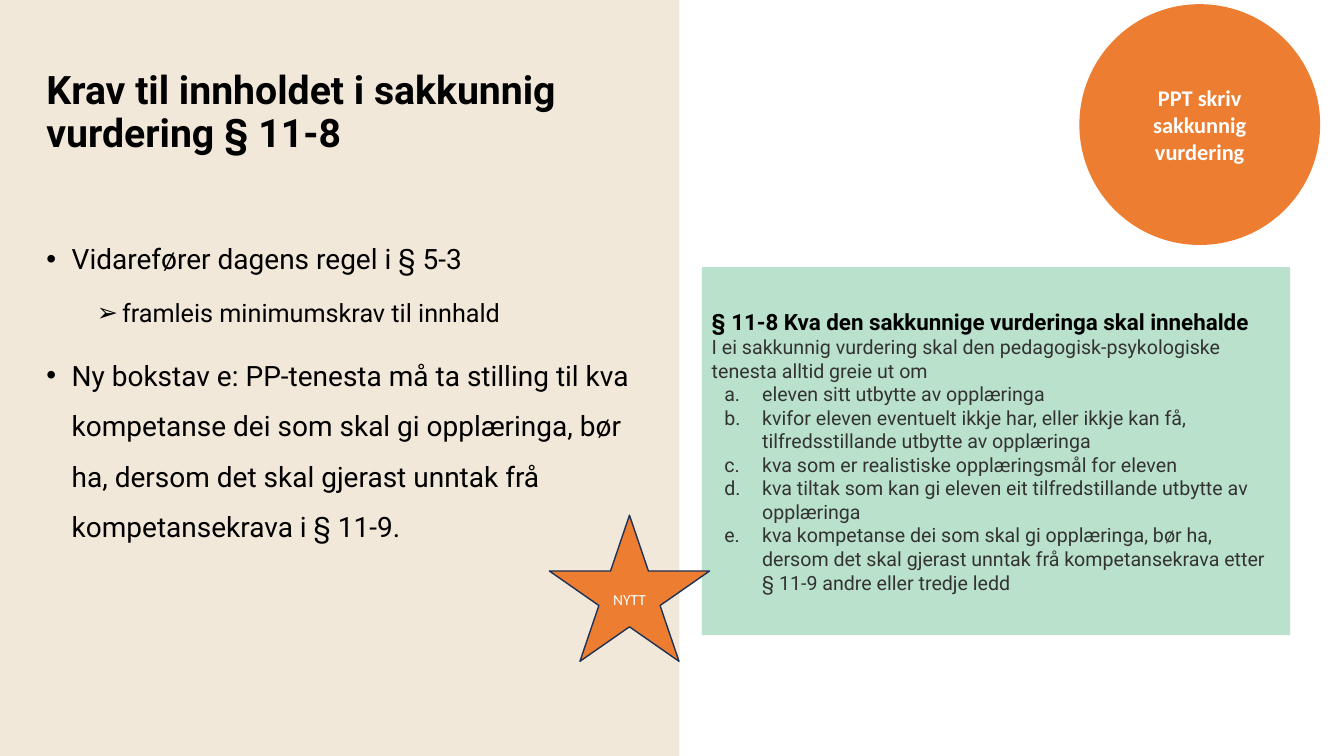
from lxml.etree import SubElement
from pptx import Presentation
from pptx.dml.color import RGBColor
from pptx.enum.shapes import MSO_SHAPE
from pptx.enum.text import MSO_ANCHOR, MSO_AUTO_SIZE, PP_ALIGN
from pptx.oxml.ns import qn
from pptx.util import Pt

COLORS = {
    "sand": "F2E8DA",
    "orange": "ED7D31",
    "mint": "B9E1CC",
    "navy": "1E3256",
    "black": "000000",
    "gray": "333333",
    "white": "FFFFFF",
}


def add_block(kind, box, color):
    shape = slide.shapes.add_shape(kind, *map(Pt, box))
    shape.shadow.inherit = False
    shape.fill.solid()
    shape.fill.fore_color.rgb = RGBColor.from_string(COLORS[color])
    shape.line.fill.background()
    shape.text_frame.word_wrap = True
    shape.text_frame.vertical_anchor = MSO_ANCHOR.MIDDLE
    return shape


def add_text(frame, text, size, color, bold=False, face="Roboto",
             align=PP_ALIGN.LEFT, left=0, hang=0, mark=None):
    para = frame.paragraphs[0] if not frame.text else frame.add_paragraph()
    para.text = text
    para.alignment = align
    if mark:
        props = para._p.get_or_add_pPr()
        props.set("marL", str(Pt(left)))
        props.set("indent", str(Pt(-hang)))
        tag, name, value = mark
        SubElement(props, qn("a:buFont"), typeface="Arial")
        SubElement(props, qn(tag)).set(name, value)
    para.font.size = Pt(size)
    para.font.name = face
    para.font.bold = bold
    para.font.color.rgb = RGBColor.from_string(COLORS[color])
    return para


deck = Presentation()
deck.slide_width, deck.slide_height = Pt(960), Pt(540)
slide = deck.slides.add_slide(deck.slide_layouts[1])
title, body = slide.placeholders

panel = add_block(MSO_SHAPE.RECTANGLE, (0, 0, 485.3, 540), "sand")
title.element.addprevious(panel.element)

for holder, box, anchor in (
    (title, (26, 28.8, 465, 104.4), MSO_ANCHOR.MIDDLE),
    (body, (26, 157, 444.2, 264.2), MSO_ANCHOR.TOP),
):
    holder.left, holder.top, holder.width, holder.height = map(Pt, box)
    holder.text_frame.word_wrap = True
    holder.text_frame.auto_size = MSO_AUTO_SIZE.NONE
    holder.text_frame.vertical_anchor = anchor

head = add_text(title.text_frame, "Krav til innholdet i sakkunnig vurdering § 11-8",
                28, "black", bold=True)
head.line_spacing = 0.9

for level, text in (
    (0, "Vidarefører dagens regel i § 5-3"),
    (1, "framleis minimumskrav til innhald"),
    (0, "Ny bokstav e: PP-tenesta må ta stilling til kva kompetanse dei som skal gi "
        "opplæringa, bør ha, dersom det skal gjerast unntak frå kompetansekrava i § 11-9."),
):
    point = add_text(body.text_frame, text, 20 - 2 * level, "black",
                     left=18 + 36 * level, hang=18,
                     mark=("a:buChar", "char", "•➢"[level]))
    point.level = level
    point.line_spacing = 1.5
    point.space_before = Pt(10 - 5 * level)

circle = add_block(MSO_SHAPE.FLOWCHART_CONNECTOR, (771, 3, 172, 172), "orange")
add_text(circle.text_frame, "PPT skriv sakkunnig vurdering", 16, "white",
         bold=True, face="Calibri", align=PP_ALIGN.CENTER)

law = add_block(MSO_SHAPE.RECTANGLE, (501.3, 190.8, 420.3, 262.8), "mint")
add_text(law.text_frame, "§ 11-8 Kva den sakkunnige vurderinga skal innehalde",
         16, "black", bold=True)
add_text(law.text_frame, "I ei sakkunnig vurdering skal den pedagogisk-psykologiske "
         "tenesta alltid greie ut om", 14, "gray")
for text in (
    "eleven sitt utbytte av opplæringa",
    "kvifor eleven eventuelt ikkje har, eller ikkje kan få, tilfredsstillande utbytte av opplæringa",
    "kva som er realistiske opplæringsmål for eleven",
    "kva tiltak som kan gi eleven eit tilfredstillande utbytte av opplæringa",
    "kva kompetanse dei som skal gi opplæringa, bør ha, dersom det skal gjerast unntak "
    "frå kompetansekrava etter § 11-9 andre eller tredje ledd",
):
    item = add_text(law.text_frame, text, 14, "gray", left=36, hang=27,
                    mark=("a:buAutoNum", "type", "alphaLcPeriod"))
    item.level = 1

star = add_block(MSO_SHAPE.STAR_5_POINT, (392.4, 368, 114.5, 104.4), "orange")
star.line.color.rgb = RGBColor.from_string(COLORS["navy"])
star.line.width = Pt(1)
add_text(star.text_frame, "NYTT", 11, "white", face="Calibri", align=PP_ALIGN.CENTER)

deck.save("out.pptx")
